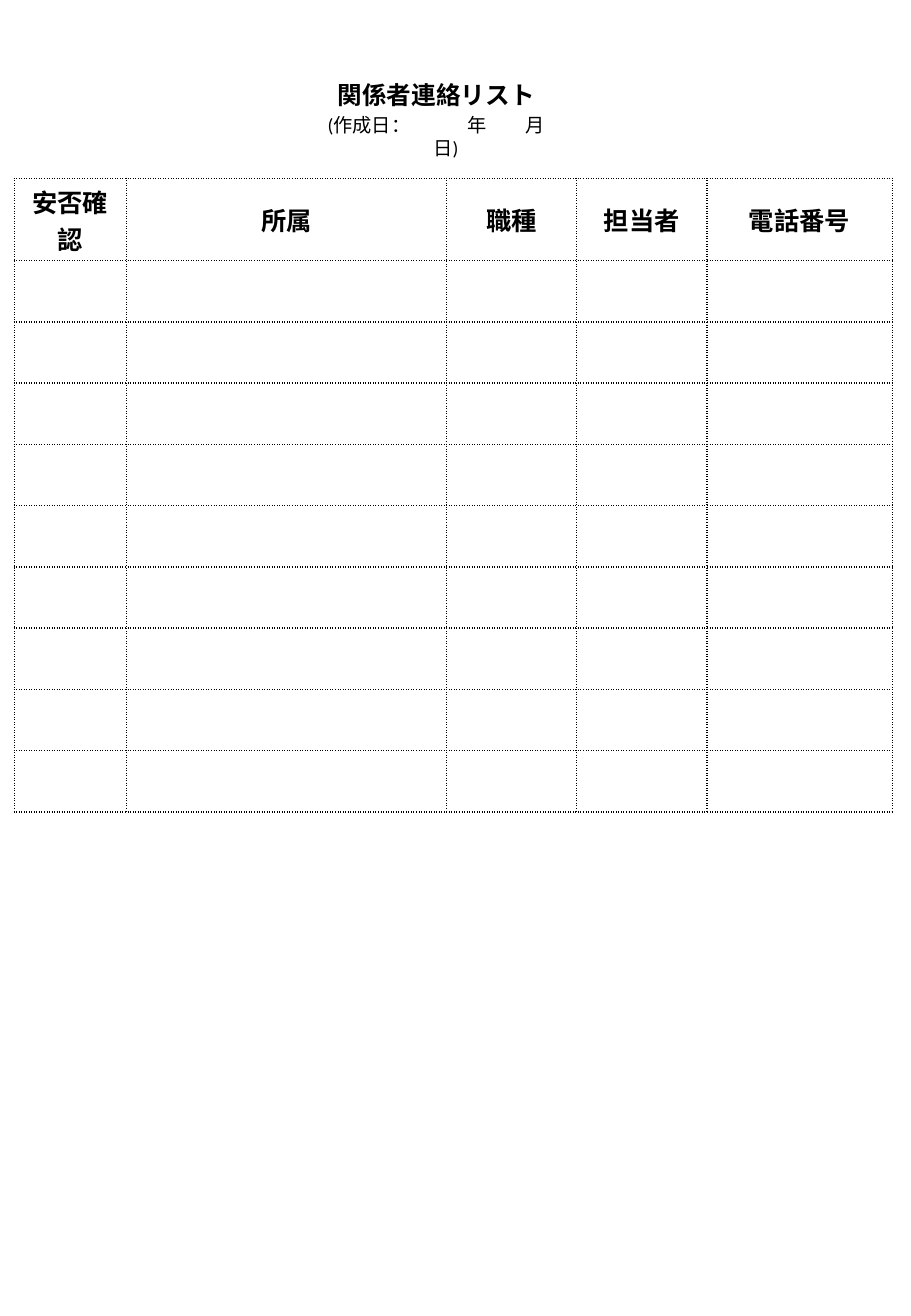
from lxml import etree
from pptx import Presentation
from pptx.dml.color import RGBColor
from pptx.enum.text import MSO_ANCHOR, MSO_AUTO_SIZE, PP_ALIGN
from pptx.oxml.ns import qn
from pptx.util import Cm, Pt

CENTER = PP_ALIGN.CENTER
TOP, MIDDLE = MSO_ANCHOR.TOP, MSO_ANCHOR.MIDDLE
FIT_SHAPE = MSO_AUTO_SIZE.SHAPE_TO_FIT_TEXT
TITLE_ONLY_LAYOUT = 5
COLORS = {"ink": "000000", "paper": "FFFFFF"}
FONT = "Calibri"

HEADINGS = ["安否確認", "所属", "職種", "担当者", "電話番号"]
COLUMN_WIDTHS = [2.34, 6.7, 2.72, 2.72, 3.88]
HEADER_HEIGHT, ROW_HEIGHT = 1.72, 1.28
CONTACT_ROWS = 9


def write_centered(text_frame, text, size, bold, anchor):
    text_frame.text = text
    text_frame.word_wrap = True
    text_frame.vertical_anchor = anchor
    paragraph = text_frame.paragraphs[0]
    paragraph.alignment = CENTER
    font = paragraph.runs[0].font
    font.name, font.size, font.bold = FONT, Pt(size), bold
    font.color.rgb = RGBColor.from_string(COLORS["ink"])


def add_dotted_borders(cell):
    properties = cell._tc.get_or_add_tcPr()
    for position, side in enumerate(("lnL", "lnR", "lnT", "lnB")):
        line = etree.Element(qn(f"a:{side}"), w=str(Pt(1)))
        fill = etree.SubElement(line, qn("a:solidFill"))
        etree.SubElement(fill, qn("a:srgbClr"), val=COLORS["ink"])
        etree.SubElement(line, qn("a:prstDash"), val="sysDot")
        properties.insert(position, line)


presentation = Presentation()
presentation.slide_width, presentation.slide_height = Cm(19.05), Cm(27.51)
slide = presentation.slides.add_slide(presentation.slide_layouts[TITLE_ONLY_LAYOUT])
slide.background.fill.solid()
slide.background.fill.fore_color.rgb = RGBColor.from_string(COLORS["paper"])

# Title and creation date
title = slide.shapes.title
title.left, title.top, title.width, title.height = Cm(4.06), Cm(1.55), Cm(10.64), Cm(0.89)
write_centered(title.text_frame, "関係者連絡リスト　", 14.6, True, TOP)
title.text_frame.auto_size = FIT_SHAPE

creation_date = slide.shapes.add_textbox(Cm(6.35), Cm(2.24), Cm(6.35), Cm(1.22))
write_centered(creation_date.text_frame, "(作成日：　　　年　　月　　日)　", 11.4, False, MIDDLE)
creation_date.text_frame.auto_size = FIT_SHAPE

# Contact table
table = slide.shapes.add_table(
    CONTACT_ROWS + 1, len(HEADINGS), Cm(0.3), Cm(3.73),
    Cm(sum(COLUMN_WIDTHS)), Cm(HEADER_HEIGHT + CONTACT_ROWS * ROW_HEIGHT),
).table
table.first_row = table.horz_banding = False
for column, width in zip(table.columns, COLUMN_WIDTHS):
    column.width = Cm(width)
for row in table.rows:
    row.height = Cm(ROW_HEIGHT)
table.rows[0].height = Cm(HEADER_HEIGHT)

for cell in table.iter_cells():
    cell.fill.background()
    add_dotted_borders(cell)

for cell, heading in zip(table.rows[0].cells, HEADINGS):
    write_centered(cell.text_frame, heading, 15, True, MIDDLE)
    cell.vertical_anchor = MIDDLE
    cell.margin_left = cell.margin_right = Cm(0.2)
    cell.margin_top = cell.margin_bottom = Cm(0.1)

presentation.save("out.pptx")
